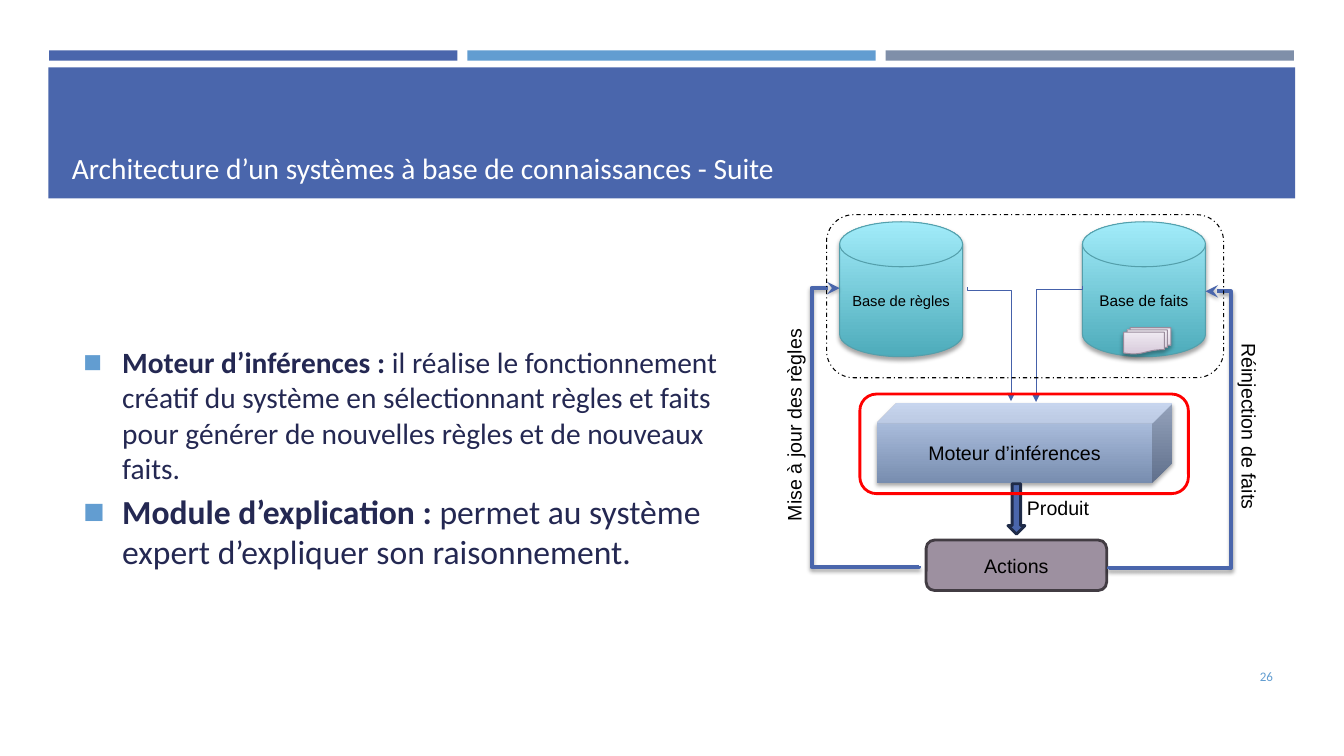
from lxml import etree
from pptx import Presentation
from pptx.dml.color import RGBColor
from pptx.enum.dml import MSO_LINE
from pptx.enum.shapes import MSO_CONNECTOR, MSO_SHAPE
from pptx.enum.text import MSO_ANCHOR, MSO_AUTO_SIZE, PP_ALIGN
from pptx.oxml.ns import qn
from pptx.util import Cm, Pt

RECT, ROUND = MSO_SHAPE.RECTANGLE, MSO_SHAPE.ROUNDED_RECTANGLE
DISK, CUBE = MSO_SHAPE.FLOWCHART_MAGNETIC_DISK, MSO_SHAPE.CUBE
DOCS, DOWN = MSO_SHAPE.FLOWCHART_MULTIDOCUMENT, MSO_SHAPE.DOWN_ARROW
ELBOW, DASH_DOT = MSO_CONNECTOR.ELBOW, MSO_LINE.DASH_DOT
LEFT, CENTER, RIGHT = PP_ALIGN.LEFT, PP_ALIGN.CENTER, PP_ALIGN.RIGHT
TOP, MIDDLE, BOTTOM = MSO_ANCHOR.TOP, MSO_ANCHOR.MIDDLE, MSO_ANCHOR.BOTTOM
NO_FIT = MSO_AUTO_SIZE.NONE

COLORS = {
    "blue": "4A66AC", "sky": "629DD1", "slate": "7F8FA9", "navy": "242852",
    "white": "FFFFFF", "black": "000000", "red": "FF0000", "link": "4561AA",
    "disk_low": "4DABBA", "disk_high": "A2ECFA", "disk_edge": "549FAB",
    "docs_low": "D8CBDB", "docs_high": "F3EFF6", "docs_edge": "998B9C",
    "cube_low": "788DAF", "cube_high": "B9CBEA", "arrow_edge": "1F2B48",
    "mauve": "9D90A0", "mauve_edge": "423C43",
}

TITLE = "Architecture d’un systèmes à base de connaissances - Suite"
BULLETS = [
    (21, "Moteur d’inférences : ", "il réalise le fonctionnement créatif du système en "
     "sélectionnant règles et faits pour générer de nouvelles règles et de nouveaux faits."),
    (24, "Module d’explication : ", "permet au système expert d’expliquer son raisonnement."),
]
BARS = ["blue", "sky", "slate"]
DISK_FILL = ("disk_low", "disk_high")
NODES = [
    (DISK, (21.16, 5.59, 3.1, 3.4), DISK_FILL, ("disk_edge", 0.75), True, "Base de règles", 10.5),
    (DISK, (27.28, 5.59, 3.1, 3.4), DISK_FILL, ("disk_edge", 0.75), True, "Base de faits", 11),
    (DOCS, (28.32, 8.26, 1.19, 0.66), ("docs_low", "docs_high"), ("docs_edge", 0.75), True, "", 0),
    (CUBE, (22.1, 10.16, 7.44, 2.01), ("cube_low", "cube_high"), None, True,
     "Moteur d’inférences", 14),
    (DOWN, (25.4, 12.19, 0.43, 1.27), ("blue",), ("arrow_edge", 2), False, "", 0),
    (ROUND, (23.34, 13.61, 4.55, 1.27), ("mauve",), ("mauve_edge", 2), False, "Actions", 14),
]
LINKS = [
    ((27.28, 7.21), (26.11, 10.13), "link", 0.75, "triangle", [0.028]),
    ((24.38, 7.24), (25.48, 10.11), "link", 0.75, "triangle", [0.032]),
    ((27.94, 14.35), (30.38, 7.34), "blue", 3, "stealth", [0.005, 1.26]),
    ((23.16, 14.27), (21.16, 7.26), "blue", 3, "stealth", [-0.002, 1.352]),
]
LABELS = [
    ("Mise à jour des règles", (17.22, 10.16, 5.59, 0.86), 270),
    ("Réinjection de faits", (28.68, 10.77, 5.59, 0.86), 90),
    ("Produit", (25.63, 12.37, 2.18, 0.86), 0),
]
KNOWLEDGE_FRAME = (20.83, 5.41, 10.01, 4.11)
ENGINE_FRAME = (21.67, 9.93, 8.28, 2.51)


def rgb(name):
    return RGBColor.from_string(COLORS[name])


def child(parent, tag, **attrs):
    return etree.SubElement(parent, qn(tag), {k: str(v) for k, v in attrs.items()})


def place(sp, box):
    sp.left, sp.top, sp.width, sp.height = map(Cm, box)


def add_run(p, text, size, color, font="Arial", bold=False):
    r = p.add_run()
    r.text = text
    r.font.size, r.font.name, r.font.bold = Pt(size), font, bold
    r.font.color.rgb = rgb(color)


def set_frame(tf, anchor, inset=None):
    tf.word_wrap, tf.auto_size, tf.vertical_anchor = True, NO_FIT, anchor
    if inset:
        tf.margin_left = tf.margin_right = Cm(inset[0])
        tf.margin_top = tf.margin_bottom = Cm(inset[1])


def add_shadow(effects):
    shadow = child(effects, "a:outerShdw", blurRad=Pt(3.1), dist=Pt(1.8),
                   dir=90 * 60000, rotWithShape=0)
    child(child(shadow, "a:srgbClr", val=COLORS["black"]), "a:alpha", val=35000)


def add_node(kind, box, fill=(), line=None, shadow=False, text="", size=0):
    sp = s.shapes.add_shape(kind, *map(Cm, box))
    sp.shadow.inherit = False
    if len(fill) == 2:
        sp.fill.gradient()
        sp.fill.gradient_angle = 90
        for stop, color in zip(sp.fill.gradient_stops, fill):
            stop.color.rgb = rgb(color)
    elif fill:
        sp.fill.solid()
        sp.fill.fore_color.rgb = rgb(fill[0])
    else:
        sp.fill.background()
    if line:
        sp.line.color.rgb, sp.line.width = rgb(line[0]), Pt(line[1])
    else:
        sp.line.fill.background()
    if shadow:
        add_shadow(sp._element.spPr.find(qn("a:effectLst")))
    if text:
        set_frame(sp.text_frame, MIDDLE)
        p = sp.text_frame.paragraphs[0]
        p.alignment = CENTER
        add_run(p, text, size, "black")
    return sp


def add_link(start, end, color, width, head, bends):
    dx, dy = end[0] - start[0], end[1] - start[1]
    w, h = abs(dy), abs(dx)
    x, y = (start[0] + end[0] - w) / 2, (start[1] + end[1] - h) / 2
    link = s.shapes.add_connector(ELBOW, Cm(x), Cm(y), Cm(x + w), Cm(y + h))
    link.line.color.rgb, link.line.width = rgb(color), Pt(width)
    props = link._element.spPr
    xfrm = props.find(qn("a:xfrm"))
    xfrm.set("rot", str((90 if dx < 0 else 270) * 60000))
    if (dx < 0) == (dy < 0):
        xfrm.set("flipH", "1")
    geom = props.find(qn("a:prstGeom"))
    geom.set("prst", f"bentConnector{len(bends) + 2}")
    guides = geom.find(qn("a:avLst"))
    for i, bend in enumerate(bends, 1):
        child(guides, "a:gd", name=f"adj{i}", fmla=f"val {round(bend * 100000)}")
    child(props.find(qn("a:ln")), "a:tailEnd", type=head)
    effects = child(props, "a:effectLst")
    if width > 1:
        add_shadow(effects)


def add_label(text, box, size=14, color="black", font="Arial",
              align=LEFT, anchor=TOP, inset=None, rotation=0):
    sp = s.shapes.add_textbox(*map(Cm, box))
    sp.rotation = rotation
    set_frame(sp.text_frame, anchor, inset)
    p = sp.text_frame.paragraphs[0]
    p.alignment = align
    add_run(p, text, size, color, font)


prs = Presentation()
prs.slide_width, prs.slide_height = Cm(33.87), Cm(19.05)
s = prs.slides.add_slide(prs.slide_layouts[1])
title, body = s.placeholders

bands = [((1.24 + 10.54 * i, 1.27, 10.29, 0.26), c) for i, c in enumerate(BARS)]
bands.append(((1.22, 1.7, 31.42, 3.3), "blue"))
for box, color in bands:
    band = add_node(RECT, box, (color,))
    s.shapes._spTree.insert(2, band._element)

place(title, (1.63, 1.96, 30.63, 2.82))
set_frame(title.text_frame, BOTTOM, (0.18, 0.1))
p = title.text_frame.paragraphs[0]
p.alignment = LEFT
add_run(p, TITLE, 21, "white", "Calibri")

place(body, (1.63, 6.05, 17.73, 10.97))
tf = body.text_frame
set_frame(tf, MIDDLE, (0.18, 0.1))
for i, (size, term, text) in enumerate(BULLETS):
    p = tf.add_paragraph() if i else tf.paragraphs[0]
    p.space_before = Pt(4)
    add_run(p, term, size, "navy", "Calibri", True)
    add_run(p, text, size, "navy", "Calibri")
    pPr = p._p.get_or_add_pPr()
    pPr.set("marL", str(Cm(1.27)))
    pPr.set("indent", str(-Cm(0.97)))
    child(child(pPr, "a:buClr"), "a:srgbClr", val=COLORS["sky"])
    child(pPr, "a:buChar", char="◼")

for node in NODES:
    add_node(*node)
for link in LINKS:
    add_link(*link)
for text, box, rotation in LABELS:
    add_label(text, box, rotation=rotation)

frame = add_node(ROUND, KNOWLEDGE_FRAME, line=("black", 0.75))
frame.line.dash_style = DASH_DOT
add_node(ROUND, ENGINE_FRAME, line=("red", 2))
add_label("26", (29.34, 16.54, 2.92, 1.02), 9.3, "sky", "Calibri", RIGHT, MIDDLE, (0.18, 0.1))

prs.save("out.pptx")
